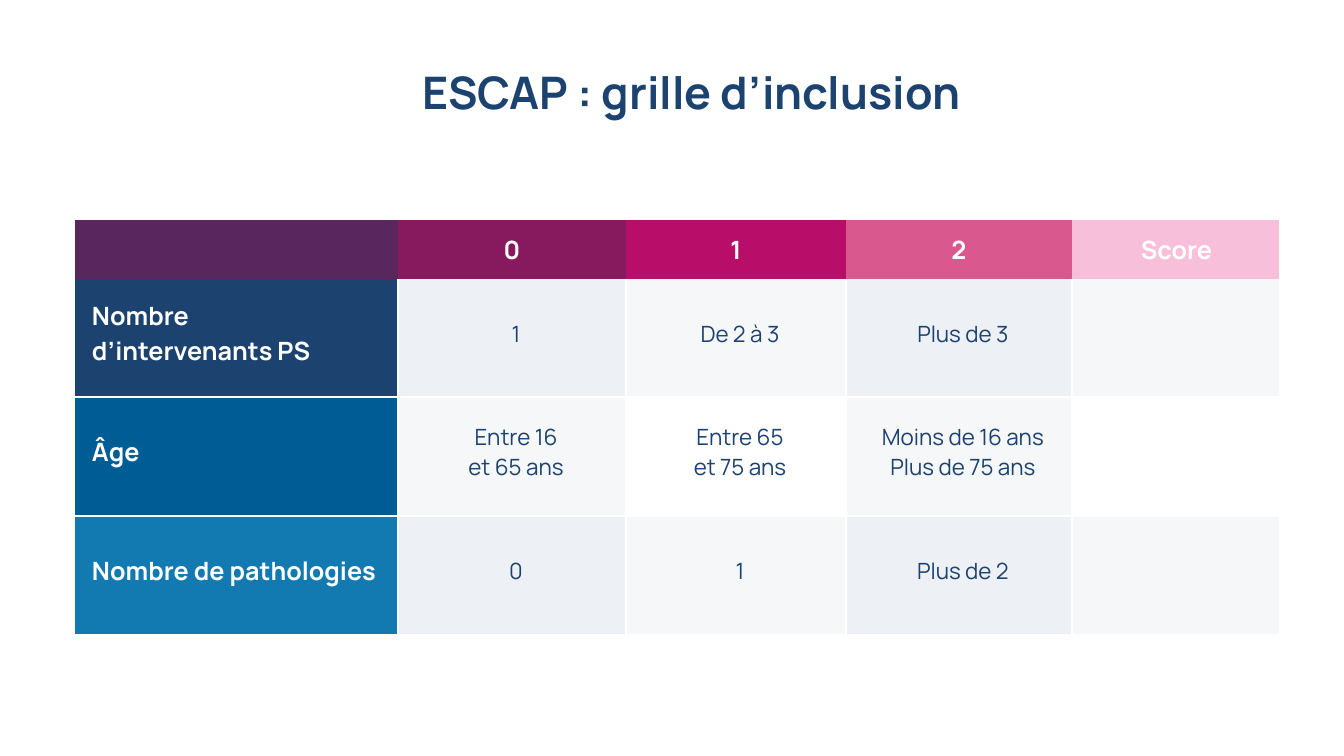
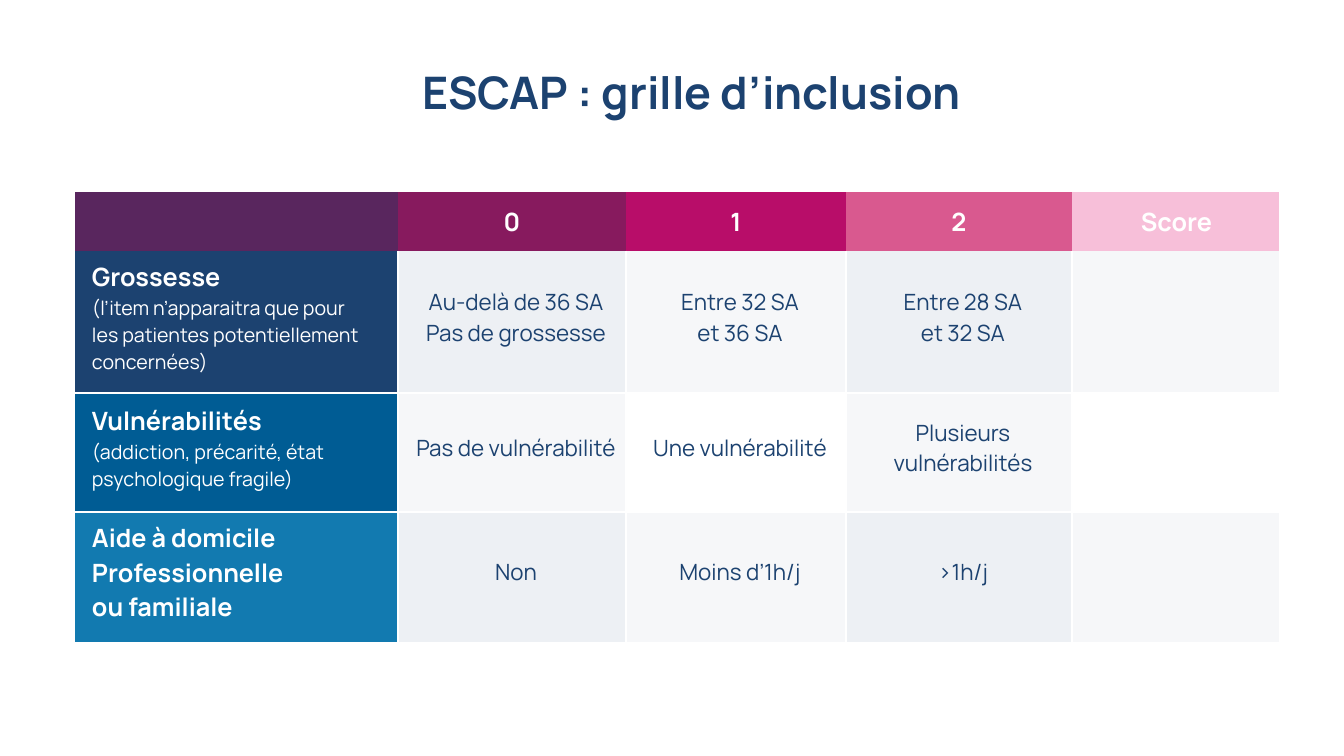
from lxml import etree
from pptx import Presentation
from pptx import util as u
from pptx.dml.color import RGBColor
from pptx.enum import text
from pptx.oxml import ns

TITLE = "ESCAP : grille d’inclusion"
HEADINGS = ["", "0", "1", "2", "Score"]

# Each grid row: label paragraphs, then the criteria scoring 0, 1 and 2.
# A tuple holds paragraphs; a newline is a line break inside one.
GRIDS = [
    {
        "top": 220,
        "heights": [59, 118, 119, 118],
        "rows": [
            [("Nombre\nd’intervenants PS",), ("1",), ("De 2 à 3",), ("Plus de 3",)],
            [("Âge",), ("Entre 16\net 65 ans",), ("Entre 65\net 75 ans",),
             ("Moins de 16 ans", "Plus de 75 ans")],
            [("Nombre de pathologies",), ("0",), ("1",), ("Plus de 2",)],
        ],
    },
    {
        "top": 192,
        "heights": [59, 142, 119, 130],
        "rows": [
            [("Grossesse",
              "(l’item n’apparaitra que pour\nles patientes potentiellement concernées)"),
             ("Au-delà de 36 SA", "Pas de grossesse"),
             ("Entre 32 SA\net 36 SA",), ("Entre 28 SA\net 32 SA",)],
            [("Vulnérabilités", "(addiction, précarité, état psychologique fragile)"),
             ("Pas de vulnérabilité",), ("Une vulnérabilité",),
             ("Plusieurs vulnérabilités",)],
            [("Aide à domicile Professionnelle\nou familiale",),
             ("Non",), ("Moins d’1h/j",), (">1h/j",)],
        ],
    },
]

FONT = "Manrope"
WHITE = RGBColor(0xFF, 0xFF, 0xFF)
NAVY = RGBColor(0x1C, 0x42, 0x70)
PALE = RGBColor(0xF6, 0xF7, 0xF9)
MIST = RGBColor(0xED, 0xF0, 0xF4)
HEADING_FILLS = [RGBColor(0x59, 0x26, 0x5E), RGBColor(0x87, 0x1A, 0x5E),
                 RGBColor(0xB8, 0x0D, 0x69), RGBColor(0xD9, 0x59, 0x8F),
                 RGBColor(0xF7, 0xBF, 0xD9)]
LABEL_FILLS = [NAVY, RGBColor(0x00, 0x5C, 0x94), RGBColor(0x12, 0x7A, 0xB0)]
TINTS = [(MIST, PALE), (PALE, WHITE)]  # alternate by row, then by column

GRID_LEFT = 75
COLUMN_WIDTHS = [323, 228, 220, 226, 209]
HEADING_INSETS = (10, 5, 10, 5)  # left, top, right, bottom
BODY_INSETS = (17, 9, 9, 18)
NO_STYLE = "{2D5ABB26-0587-4C30-8999-92F81FD0307C}"


def px(length):
    return u.Emu(round(length * 914400 / 100.8))


def style(paragraph, size, color, bold=False, align=text.PP_ALIGN.CENTER):
    paragraph.alignment = align
    font = paragraph.font
    font.name, font.size, font.bold = FONT, u.Pt(size), bold
    font.color.rgb = color


def add_title(slide):
    frame = slide.shapes.add_textbox(px(128), px(57), px(1128), px(62)).text_frame
    frame.word_wrap = True
    frame.vertical_anchor = text.MSO_ANCHOR.BOTTOM
    frame.margin_top = frame.margin_bottom = 0
    frame.text = TITLE
    style(frame.paragraphs[0], 32, NAVY, bold=True)


def add_border(cell, side, width):
    line = etree.SubElement(cell._tc.get_or_add_tcPr(), ns.qn(f"a:ln{side}"),
                            w=str(u.Pt(width)))
    fill = etree.SubElement(line, ns.qn("a:solidFill"))
    etree.SubElement(fill, ns.qn("a:srgbClr"), val=str(WHITE))


def add_body_borders(cell, row, column, last_row, last_column):
    """Rule the inner edges in white, and the grid's right edge more thickly."""
    if column > 0:
        add_border(cell, "L", 1)
    add_border(cell, "R", 3 if column == last_column else 1)
    if row > 0:
        add_border(cell, "T", 1)
    if row < last_row:
        add_border(cell, "B", 1)


def fill_cell(cell, color, insets):
    cell.fill.solid()
    cell.fill.fore_color.rgb = color
    cell.vertical_anchor = text.MSO_ANCHOR.MIDDLE
    (cell.margin_left, cell.margin_top,
     cell.margin_right, cell.margin_bottom) = map(px, insets)


def write_paragraphs(cell, paragraphs):
    frame = cell.text_frame
    for index, words in enumerate(paragraphs):
        paragraph = frame.add_paragraph() if index else frame.paragraphs[0]
        paragraph.text = words
        yield index, paragraph


def write_label(cell, paragraphs):
    for index, paragraph in write_paragraphs(cell, paragraphs):
        style(paragraph, 14 if index else 18, WHITE, bold=index == 0,
              align=text.PP_ALIGN.LEFT)
        paragraph.line_spacing = 1.0


def write_criterion(cell, paragraphs):
    for _, paragraph in write_paragraphs(cell, paragraphs):
        style(paragraph, 16, NAVY)


def add_grid(slide, grid):
    rows, heights = grid["rows"], grid["heights"]
    table = slide.shapes.add_table(
        len(heights), len(COLUMN_WIDTHS), px(GRID_LEFT), px(grid["top"]),
        px(sum(COLUMN_WIDTHS)), px(sum(heights))).table
    table.horz_banding = False
    table._tbl.tblPr.find(ns.qn("a:tableStyleId")).text = NO_STYLE
    for column, width in zip(table.columns, COLUMN_WIDTHS):
        column.width = px(width)
    for row, height in zip(table.rows, heights):
        row.height = px(height)

    last_row, last_column = len(rows) - 1, len(HEADINGS) - 1
    for column, (heading, color) in enumerate(zip(HEADINGS, HEADING_FILLS)):
        cell = table.cell(0, column)
        if column == last_column:
            add_border(cell, "R", 3)
        fill_cell(cell, color, HEADING_INSETS)
        if heading:
            cell.text = heading
            style(cell.text_frame.paragraphs[0], 18, WHITE, bold=True)

    for row, (label, *criteria) in enumerate(rows):
        for column in range(len(HEADINGS)):
            cell = table.cell(row + 1, column)
            add_body_borders(cell, row, column, last_row, last_column)
            tint = TINTS[row % 2][(column + 1) % 2]
            fill_cell(cell, tint if column else LABEL_FILLS[row], BODY_INSETS)
        write_label(table.cell(row + 1, 0), label)
        for column, criterion in enumerate(criteria, 1):
            write_criterion(table.cell(row + 1, column), criterion)


def main():
    deck = Presentation()
    deck.slide_width, deck.slide_height = px(1344), px(756)
    for grid in GRIDS:
        slide = deck.slides.add_slide(deck.slide_layouts[6])
        add_grid(slide, grid)
        add_title(slide)
    deck.save("out.pptx")


if __name__ == "__main__":
    main()
